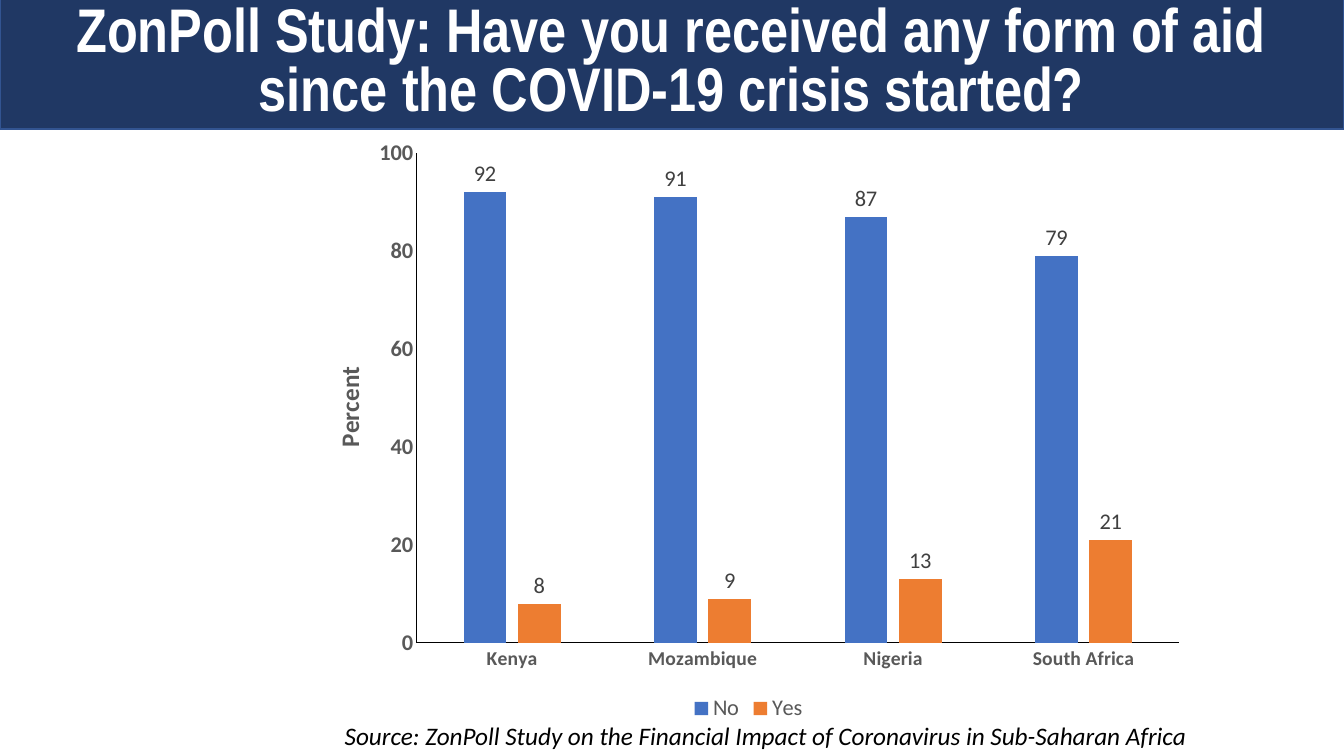
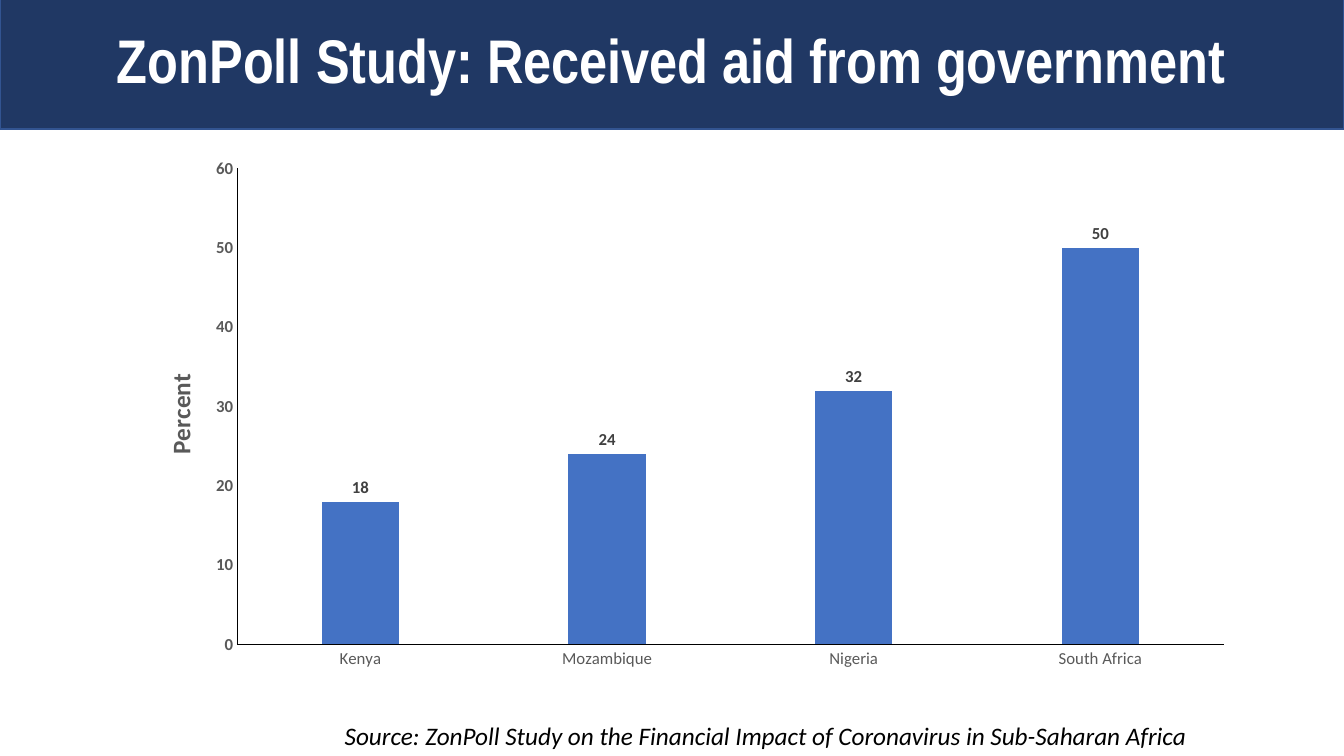
from lxml import etree
from pptx import Presentation
from pptx.chart.data import CategoryChartData
from pptx.dml.color import RGBColor
from pptx.enum.chart import XL_CHART_TYPE, XL_LABEL_POSITION, XL_LEGEND_POSITION, XL_TICK_MARK
from pptx.enum.text import MSO_ANCHOR, MSO_AUTO_SIZE, PP_ALIGN
from pptx.oxml.ns import qn
from pptx.util import Inches, Pt

COLUMNS = XL_CHART_TYPE.COLUMN_CLUSTERED
OUTSIDE_END = XL_LABEL_POSITION.OUTSIDE_END
LEGEND_BOTTOM = XL_LEGEND_POSITION.BOTTOM
NO_TICK = XL_TICK_MARK.NONE
MIDDLE = MSO_ANCHOR.MIDDLE
NO_FIT = MSO_AUTO_SIZE.NONE
CENTER = PP_ALIGN.CENTER

COLORS = {
    "band": "203864", "band_line": "325491", "white": "FFFFFF", "black": "000000",
    "axis_text": "595959", "label_text": "404040",
}
SERIES_COLORS = ["4472C4", "ED7D31"]
TITLE_FONT = "Arial Narrow"
BODY_FONT = "Calibri"
COUNTRIES = ["Kenya", "Mozambique", "Nigeria", "South Africa"]
SOURCE = "Source: ZonPoll Study on the Financial Impact of Coronavirus in Sub-Saharan Africa"

# Layout values are fractions of the chart's width and height
SLIDES = [
    {
        "title": "ZonPoll Study: Have you received any form of aid since the COVID-19 crisis started?",
        "line_spacing": 0.8,
        "chart_box": (2.98, 1.28, 8.89, 5.93),
        "plot_layout": {"x": 0.13, "y": 0.04, "w": 0.85, "h": 0.82},
        "axis_title_layout": {"x": 0.03, "y": 0.39},
        "series": {"No": [92, 91, 87, 79], "Yes": [8, 9, 13, 21]},
        "maximum": 100, "major_unit": 20,
        "category_size": 14, "category_bold": True, "value_size": 16,
        "label_size": 16, "label_bold": False, "legend": True,
    },
    {
        "title": "ZonPoll Study: Received aid from government",
        "line_spacing": 0.9,
        "chart_box": (1.24, 1.46, 11.12, 5.25),
        "plot_layout": {"x": 0.1, "y": 0.04, "w": 0.88, "h": 0.9},
        "axis_title_layout": {"x": 0.03, "y": 0.42},
        "series": {"Series 1": [18, 24, 32, 50]},
        "maximum": 60, "major_unit": 10,
        "category_size": 12, "category_bold": False, "value_size": 12,
        "label_size": 12, "label_bold": True, "legend": False,
    },
]


def style_font(font, size, color, name=BODY_FONT, bold=False, italic=False):
    font.name = name
    font.size = Pt(size)
    font.bold = bold
    font.italic = italic
    font.color.rgb = RGBColor.from_string(COLORS[color])


def set_layout(parent, position, fractions):
    """Place a chart part by hand; position is its layout's index in parent."""
    layout = parent.find(qn("c:layout"))
    if layout is not None:
        parent.remove(layout)
    layout = etree.Element(qn("c:layout"))
    parent.insert(position, layout)
    manual = etree.SubElement(layout, qn("c:manualLayout"))
    if "w" in fractions:
        etree.SubElement(manual, qn("c:layoutTarget")).set("val", "inner")
    for side in ("x", "y"):
        etree.SubElement(manual, qn(f"c:{side}Mode")).set("val", "edge")
    for side, fraction in fractions.items():
        etree.SubElement(manual, qn(f"c:{side}")).set("val", str(fraction))


presentation = Presentation()
presentation.slide_width = Inches(13.33)
presentation.slide_height = Inches(7.5)
title_only = presentation.slide_layouts[5]

for content in SLIDES:
    slide = presentation.slides.add_slide(title_only)

    # Title band
    title = slide.shapes.title
    title.left, title.top = Inches(0), Inches(-0.01)
    title.width, title.height = Inches(13.33), Inches(1.29)
    title.fill.solid()
    title.fill.fore_color.rgb = RGBColor.from_string(COLORS["band"])
    title.line.color.rgb = RGBColor.from_string(COLORS["band_line"])
    title.line.width = Pt(1)
    title.text_frame.text = content["title"]
    title.text_frame.auto_size = NO_FIT
    title.text_frame.vertical_anchor = MIDDLE
    paragraph = title.text_frame.paragraphs[0]
    paragraph.alignment = CENTER
    paragraph.line_spacing = content["line_spacing"]
    style_font(paragraph.runs[0].font, 44, "white", TITLE_FONT, bold=True)

    # Column chart
    chart_data = CategoryChartData()
    chart_data.categories = COUNTRIES
    for name, values in content["series"].items():
        chart_data.add_series(name, values)
    box = [Inches(length) for length in content["chart_box"]]
    chart = slide.shapes.add_chart(COLUMNS, *box, chart_data).chart
    style_font(chart.font, 10, "black")
    chart.has_title = False
    chart.has_legend = content["legend"]
    if chart.has_legend:
        chart.legend.position = LEGEND_BOTTOM
        chart.legend.include_in_layout = False
        style_font(chart.legend.font, 16, "axis_text")

    plot = chart.plots[0]
    plot.gap_width = 219
    plot.overlap = -27
    plot.vary_by_categories = False
    for series, color in zip(plot.series, SERIES_COLORS):
        series.format.fill.solid()
        series.format.fill.fore_color.rgb = RGBColor.from_string(color)
        labels = series.data_labels
        labels.show_value = True
        labels.position = OUTSIDE_END
        style_font(labels.font, content["label_size"], "label_text", bold=content["label_bold"])

    # Axes
    category_axis, value_axis = chart.category_axis, chart.value_axis
    for axis in (category_axis, value_axis):
        axis.has_major_gridlines = False
        axis.major_tick_mark = NO_TICK
        axis.minor_tick_mark = NO_TICK
        axis.format.line.color.rgb = RGBColor.from_string(COLORS["black"])
        axis.format.line.width = Pt(0.75)
    style_font(category_axis.tick_labels.font, content["category_size"], "axis_text",
               bold=content["category_bold"])
    style_font(value_axis.tick_labels.font, content["value_size"], "axis_text", bold=True)
    value_axis.minimum_scale = 0
    value_axis.maximum_scale = content["maximum"]
    value_axis.major_unit = content["major_unit"]

    axis_title = value_axis.axis_title
    axis_title.text_frame.text = "Percent"
    style_font(axis_title.text_frame.paragraphs[0].runs[0].font, 18, "axis_text", bold=True)
    title_element = axis_title._element
    body_properties = title_element.find(".//" + qn("a:bodyPr"))
    body_properties.set("rot", "-5400000")
    body_properties.set("vert", "horz")
    set_layout(title_element, 1, content["axis_title_layout"])
    plot_area = chart._chartSpace.find(".//" + qn("c:plotArea"))
    set_layout(plot_area, 0, content["plot_layout"])

    # Source line
    source = slide.shapes.add_textbox(Inches(3.32), Inches(7.1), Inches(8.88), Inches(0.4))
    source.text_frame.word_wrap = False
    source.text_frame.text = SOURCE
    style_font(source.text_frame.paragraphs[0].runs[0].font, 18, "black", italic=True)

presentation.save("out.pptx")
